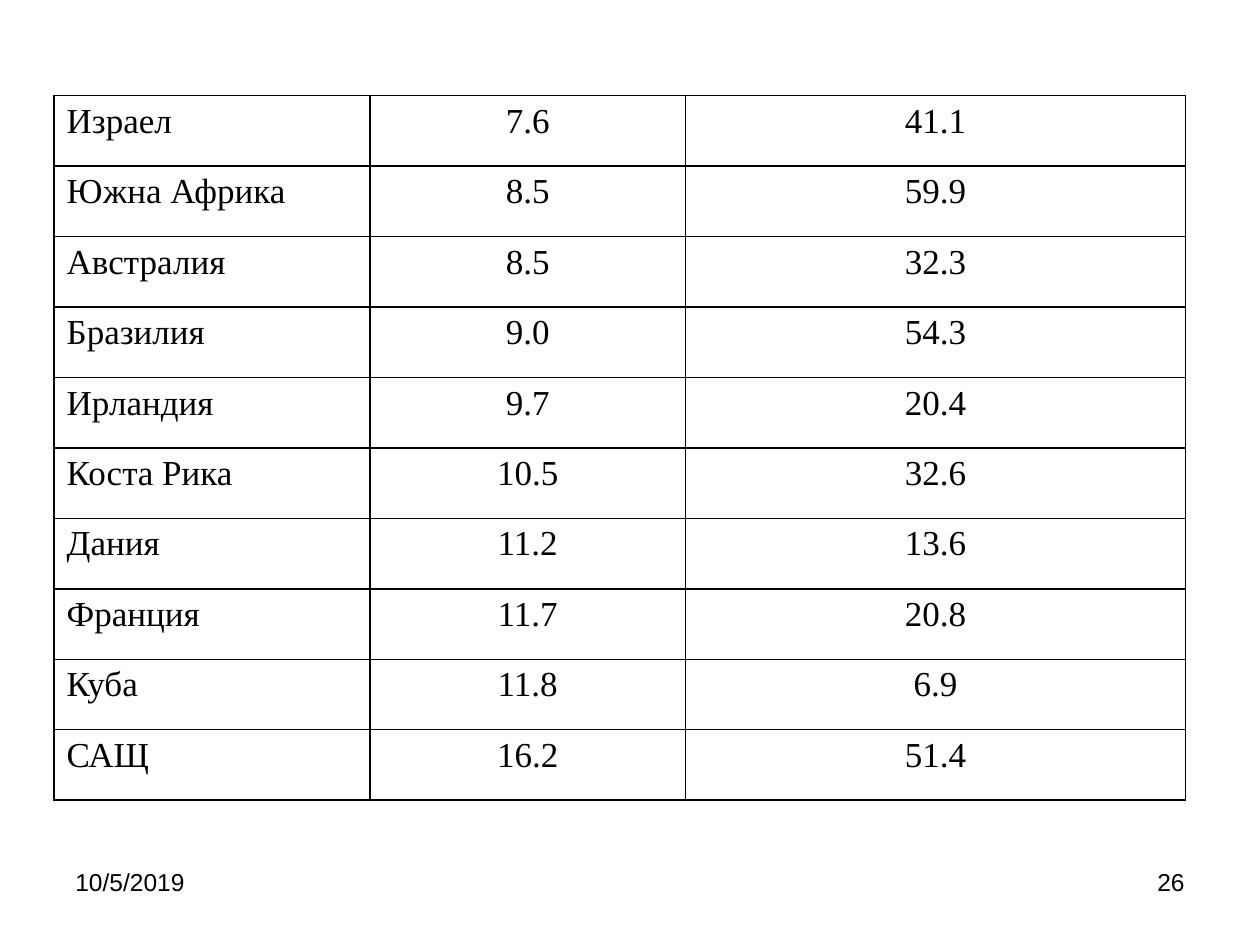
from dataclasses import dataclass

from lxml import etree
from pptx import Presentation
from pptx.dml.color import RGBColor
from pptx.enum.text import PP_ALIGN
from pptx.oxml.ns import qn
from pptx.util import Cm, Pt

LEFT, MID, RIGHT, FULL = PP_ALIGN.LEFT, PP_ALIGN.CENTER, PP_ALIGN.RIGHT, PP_ALIGN.JUSTIFY


@dataclass(frozen=True)
class Theme:
    """Colours, fonts and sizes of the slide."""
    ink: str = "000000"
    serif: str = "Times New Roman"
    sans: str = "Arial"
    body: int = 20
    small: int = 14
    rule: int = 1


THEME = Theme()
SHARES = (6.37, 6.36, 10.08)
ROWS = (
    ("Израел", "7.6", "41.1"),
    ("Южна Африка", "8.5", "59.9"),
    ("Австралия", "8.5", "32.3"),
    ("Бразилия", "9.0", "54.3"),
    ("Ирландия", "9.7", "20.4"),
    ("Коста Рика", "10.5", "32.6"),
    ("Дания", "11.2", "13.6"),
    ("Франция", "11.7", "20.8"),
    ("Куба", "11.8", "6.9"),
    ("САЩ", "16.2", "51.4"),
)


def write(frame, text, face, size, align):
    """Put one styled paragraph in a text frame."""
    para = frame.paragraphs[0]
    para.text = text
    para.alignment = align
    para.font.name = face
    para.font.size = Pt(size)
    para.font.color.rgb = RGBColor.from_string(THEME.ink)


def rule_cell(cell):
    """Draw a thin line on each side of a cell."""
    props = cell._tc.get_or_add_tcPr()
    for side in ("a:lnL", "a:lnR", "a:lnT", "a:lnB"):
        line = etree.SubElement(props, qn(side), w=str(Pt(THEME.rule)))
        fill = etree.SubElement(line, qn("a:solidFill"))
        etree.SubElement(fill, qn("a:srgbClr"), val=THEME.ink)


def add_grid(slide, left, top, width, height):
    """Build the table of countries inside the given box."""
    grid = slide.shapes.add_table(
        len(ROWS), len(SHARES), Cm(left), Cm(top), Cm(width), Cm(height)).table
    grid.first_row = grid.horz_banding = False
    for col, share in zip(grid.columns, SHARES):
        col.width = Cm(width * share / sum(SHARES))
    for row, texts in zip(grid.rows, ROWS):
        row.height = Cm(height / len(ROWS))
        for num, (cell, text) in enumerate(zip(row.cells, texts)):
            rule_cell(cell)
            cell.fill.background()
            write(cell.text_frame, text, THEME.serif, THEME.body, MID if num else FULL)


def add_foot(slide, left, top, width, height):
    """Place the date and page number at the ends of the given box."""
    wide = 5.92
    for start, text, align in ((left, "10/5/2019", LEFT),
                               (left + width - wide, "26", RIGHT)):
        box = slide.shapes.add_textbox(Cm(start), Cm(top), Cm(wide), Cm(height))
        box.text_frame.word_wrap = True
        write(box.text_frame, text, THEME.sans, THEME.small, align)


def main():
    """Build and save the slide."""
    deck = Presentation()
    deck.slide_width, deck.slide_height = Cm(25.4), Cm(19.05)
    slide = deck.slides.add_slide(deck.slide_layouts[6])
    add_grid(slide, 1.09, 1.93, 22.81, 14.2)
    add_foot(slide, 1.27, 17.35, 22.86, 1.32)
    deck.save("out.pptx")


if __name__ == "__main__":
    main()
